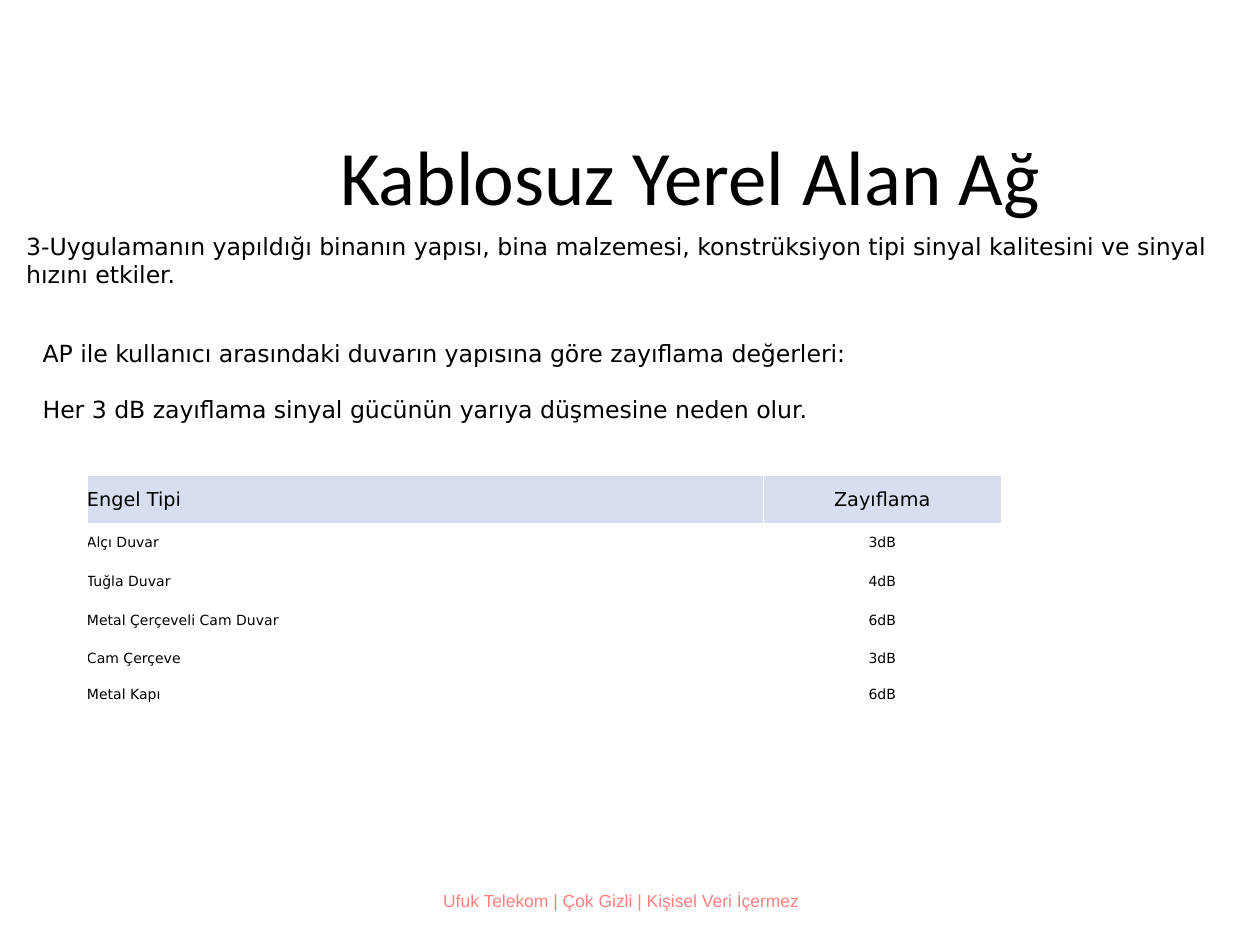
"""Build the wireless LAN slide on wall attenuation."""
import dataclasses

import lxml.etree
import pptx
import pptx.dml.color
import pptx.enum.text
import pptx.oxml.ns
import pptx.util

Pt = pptx.util.Pt
ALIGN = pptx.enum.text.PP_ALIGN
ANCHOR = pptx.enum.text.MSO_ANCHOR


@dataclasses.dataclass(frozen=True)
class Theme:
    ink: str = "000000"
    notice: str = "FF0000"
    header: str = "D6DEEF"
    title_font: str = "Calibri"
    body_font: str = "DejaVu Sans"
    notice_font: str = "Arial"
    title_size: float = 44
    body_size: float = 13.5
    header_size: float = 11
    cell_size: float = 8
    notice_size: float = 10


class Deck:
    def __init__(self, theme, width, height):
        self.theme = theme
        self.prs = pptx.Presentation()
        self.prs.slide_width, self.prs.slide_height = Pt(width), Pt(height)
        self.s = self.prs.slides.add_slide(self.prs.slide_layouts[6])

    def run(self, p, text, size, name=None, color=None, align=ALIGN.LEFT, alpha=None):
        p.alignment = align
        r = p.add_run()
        r.text = text
        values = {"size": Pt(size), "name": name or self.theme.body_font, "bold": False}
        for key, value in values.items():
            setattr(r.font, key, value)
        r.font.color.rgb = pptx.dml.color.RGBColor.from_string(color or self.theme.ink)
        if alpha is not None:
            clr = r._r.find(".//" + pptx.oxml.ns.qn("a:srgbClr"))
            lxml.etree.SubElement(clr, pptx.oxml.ns.qn("a:alpha"), val=str(alpha * 1000))

    def text(self, box, lines, size, gap=0, frame=None, **style):
        tf = self.s.shapes.add_textbox(*map(Pt, box)).text_frame
        for key, value in {"word_wrap": True, **(frame or {})}.items():
            setattr(tf, key, value)
        for i, line in enumerate(lines):
            p = tf.add_paragraph() if i else tf.paragraphs[0]
            if i:
                p.space_before = Pt(gap)
            self.run(p, line, size, **style)

    def table(self, left, top, widths, heights, rows):
        box = map(Pt, (left, top, sum(widths), sum(heights)))
        table = self.s.shapes.add_table(len(rows), len(widths), *box).table
        table.first_row = table.horz_banding = False
        for column, width in zip(table.columns, widths):
            column.width = Pt(width)
        for i, (height, row) in enumerate(zip(heights, rows)):
            table.rows[i].height = Pt(height)
            for j, value in enumerate(row):
                self.cell(table.cell(i, j), value, header=i == 0, centred=j > 0)

    def cell(self, cell, value, header, centred):
        for side in ("left", "top", "right", "bottom"):
            setattr(cell, f"margin_{side}", 0)
        cell.vertical_anchor = ANCHOR.MIDDLE
        if header:
            cell.fill.solid()
            cell.fill.fore_color.rgb = pptx.dml.color.RGBColor.from_string(self.theme.header)
        else:
            cell.fill.background()
        size = self.theme.header_size if header else self.theme.cell_size
        align = ALIGN.CENTER if centred else ALIGN.LEFT
        self.run(cell.text_frame.paragraphs[0], value, size, align=align)


def main():
    t = Theme()
    deck = Deck(t, 720, 540)
    deck.text((84.2, 67.7, 620.6, 58.3), ["Kablosuz Yerel Alan Ağ"], t.title_size,
              frame={"margin_top": Pt(6)}, name=t.title_font, align=ALIGN.CENTER)
    deck.table(49.7, 271.4, (386.5, 136), (28, 21, 23.6, 21.8, 21, 21), [
        ("Engel Tipi", "Zayıflama"),
        ("Alçı Duvar", "3dB"),
        ("Tuğla Duvar", "4dB"),
        ("Metal Çerçeveli Cam Duvar", "6dB"),
        ("Cam Çerçeve", "3dB"),
        ("Metal Kapı", "6dB"),
    ])
    deck.text((17.3, 190, 688.3, 56.2), [
        "AP ile kullanıcı arasındaki duvarın yapısına göre zayıflama değerleri:",
        "Her 3 dB zayıflama sinyal gücünün yarıya düşmesine neden olur.",
    ], t.body_size, gap=16)
    deck.text((7.9, 128.9, 707, 40.3), [
        "3-Uygulamanın yapıldığı binanın yapısı, bina malzemesi, konstrüksiyon tipi "
        "sinyal kalitesini ve sinyal hızını etkiler.",
    ], t.body_size)
    deck.text((246.2, 500.4, 228.2, 28.8), ["Ufuk Telekom | Çok Gizli | Kişisel Veri İçermez"],
              t.notice_size, frame={"vertical_anchor": ANCHOR.MIDDLE},
              name=t.notice_font, color=t.notice, alpha=50)
    deck.prs.save("out.pptx")


if __name__ == "__main__":
    main()
